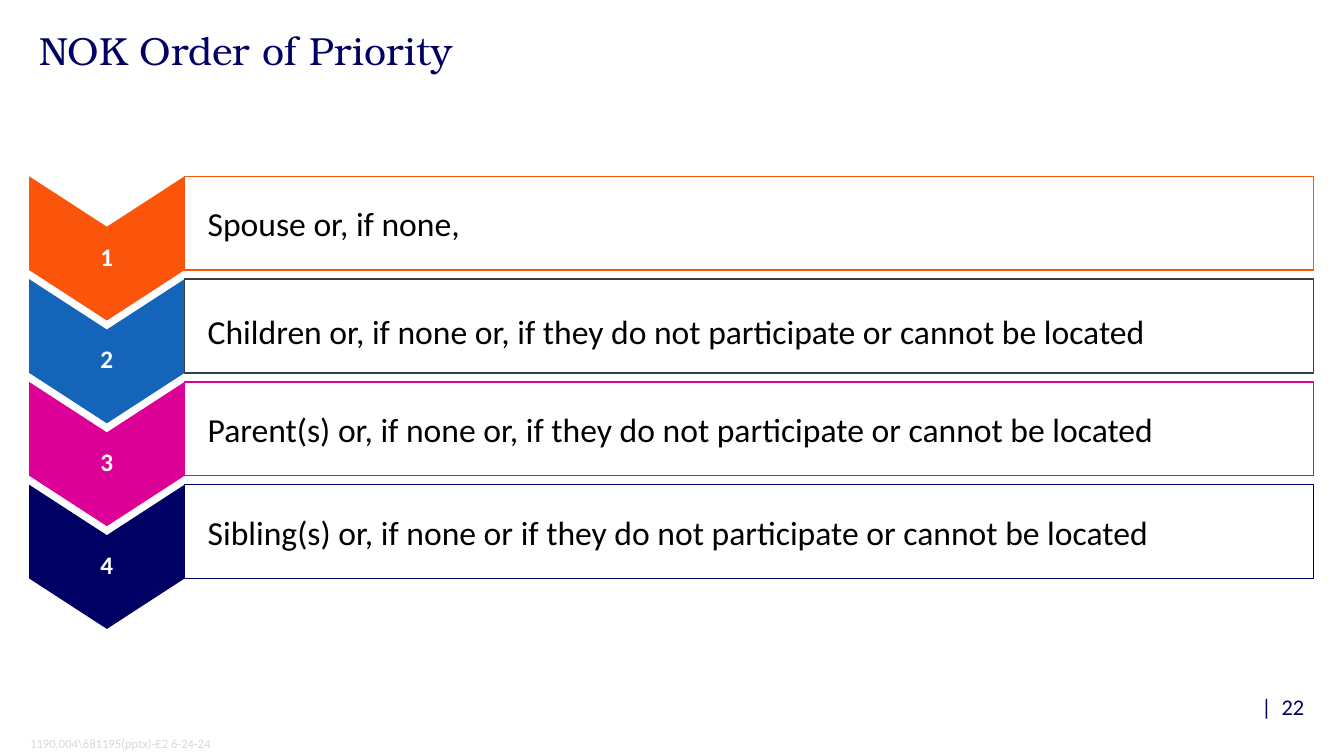
import pptx
import pptx.dml.color
import pptx.enum.shapes
import pptx.enum.text
import pptx.util

Inches = pptx.util.Inches
Pt = pptx.util.Pt
ALIGN = pptx.enum.text.PP_ALIGN
ANCHOR = pptx.enum.text.MSO_ANCHOR


def rgb(value):
    return pptx.dml.color.RGBColor.from_string(value)


def write(shape, text, size, color, insets, anchor, align=ALIGN.LEFT, font="Calibri", bold=False):
    frame = shape.text_frame
    frame.word_wrap = True
    frame.auto_size = pptx.enum.text.MSO_AUTO_SIZE.NONE
    frame.vertical_anchor = anchor
    frame.margin_left, frame.margin_top, frame.margin_right, frame.margin_bottom = map(Inches, insets)
    paragraph = frame.paragraphs[0]
    paragraph.text = text
    paragraph.alignment = align
    paragraph.font.name = font
    paragraph.font.size = Pt(size)
    paragraph.font.bold = bold
    paragraph.font.color.rgb = rgb(color)
    return paragraph


presentation = pptx.Presentation()
presentation.slide_width = Inches(13.33)
presentation.slide_height = Inches(7.5)
slide = presentation.slides.add_slide(presentation.slide_layouts[5])

title = slide.shapes.title
title.left, title.top, title.width, title.height = map(Inches, (0.29, 0.26, 12.75, 0.96))
heading = write(title, "NOK Order of Priority", 28, "000064", (0.1, 0.05, 0.1, 0.05),
                ANCHOR.TOP, font="TeX Gyre Bonum")
heading.line_spacing = 0.9

page_number = slide.shapes.add_textbox(Inches(12.51), Inches(6.77), Inches(0.65), Inches(0.48))
write(page_number, "|  22", 16, "000064", (0, 0.05, 0, 0.05), ANCHOR.MIDDLE)

document_code = slide.shapes.add_textbox(Inches(0.3), Inches(7.25), Inches(3.17), Inches(0.25))
write(document_code, "1190.004\\681195(pptx)-E2 6-24-24", 9, "D9D9D9", (0, 0.05, 0.1, 0.05), ANCHOR.TOP)

priorities = [
    ("Spouse or, if none,", "FA550A", "FA550A", 0.07),
    ("Children or, if none or, if they do not participate or cannot be located", "1464B9", "333E48", 0.16),
    ("Parent(s) or, if none or, if they do not participate or cannot be located", "DC0096", "DC0096", 0.07),
    ("Sibling(s) or, if none or if they do not participate or cannot be located", "000064", "000064", 0.07),
]
left, middle, right = 0.29, 1.06, 1.83
first_top, pitch, row_height, point_depth = 1.75, 1.02, 0.93, 0.5

for index, (text, fill_color, line_color, top_inset) in enumerate(priorities):
    top = first_top + index * pitch
    bottom = top + row_height
    outline = [(right, bottom), (middle, bottom + point_depth), (left, bottom),
               (left, top), (middle, top + point_depth)]
    builder = slide.shapes.build_freeform(Inches(right), Inches(top))
    builder.add_line_segments([(Inches(x), Inches(y)) for x, y in outline], close=True)
    chevron = builder.convert_to_shape()
    chevron.shadow.inherit = False
    chevron.fill.solid()
    chevron.fill.fore_color.rgb = rgb(fill_color)
    chevron.line.fill.background()
    write(chevron, str(index + 1), 18, "FFFFFF", (0.1, 0.2, 0.1, 0.05),
          ANCHOR.MIDDLE, ALIGN.CENTER, bold=True)

    box = slide.shapes.add_shape(pptx.enum.shapes.MSO_SHAPE.RECTANGLE, Inches(right), Inches(top),
                                 Inches(11.2), Inches(row_height))
    box.shadow.inherit = False
    box.fill.solid()
    box.fill.fore_color.rgb = rgb("FFFFFF")
    box.line.color.rgb = rgb(line_color)
    box.line.width = Pt(1)
    write(box, text, 24, "000000", (0.23, top_inset, 0.07, 0.07), ANCHOR.MIDDLE)

presentation.save("out.pptx")
